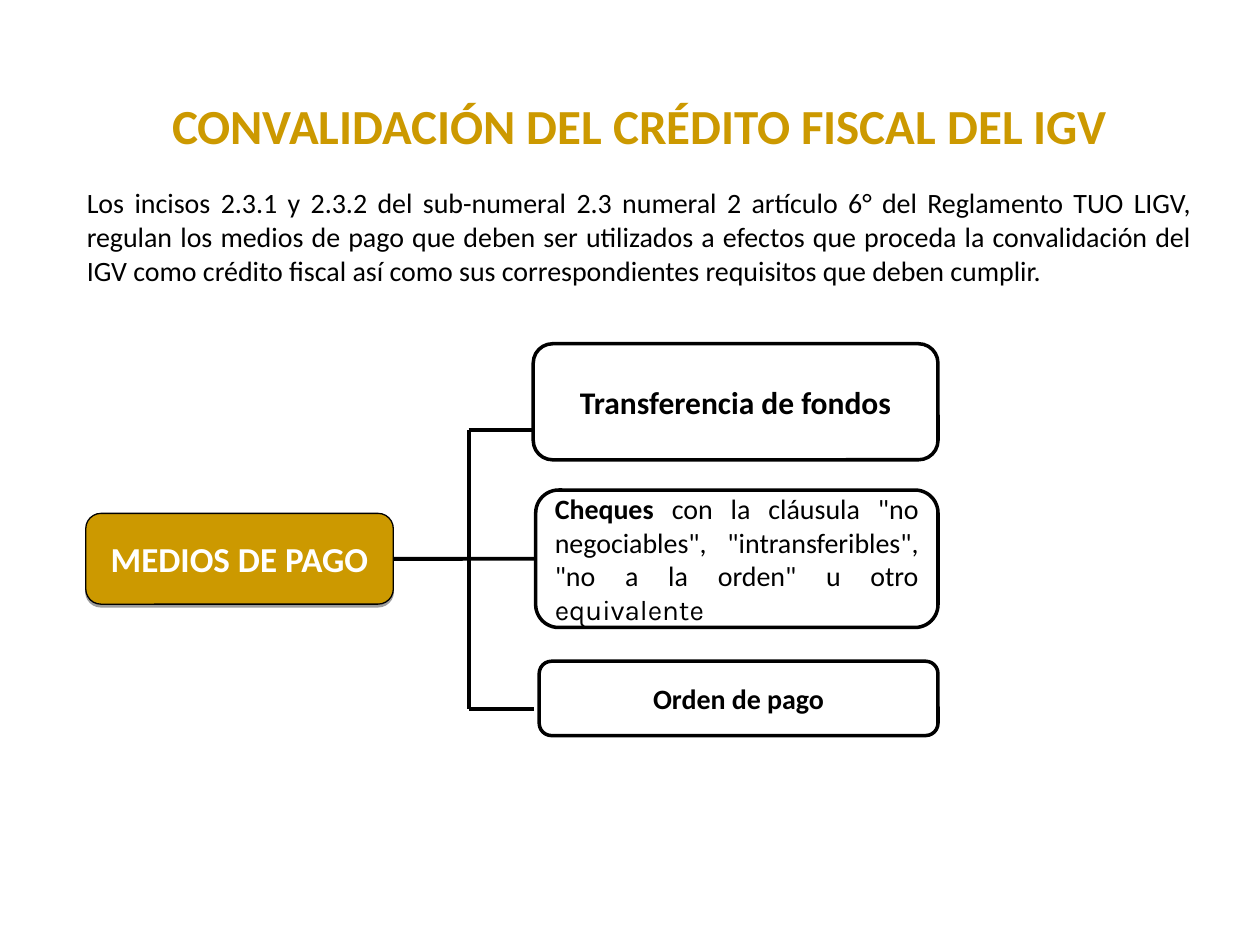
from dataclasses import dataclass

from lxml import etree
from pptx import Presentation
from pptx import util as u
from pptx.dml.color import RGBColor
from pptx.enum import shapes, text
from pptx.oxml import parse_xml
from pptx.oxml import ns


@dataclass(frozen=True)
class Theme:
    gold: RGBColor = RGBColor(0xCC, 0x99, 0x00)
    white: RGBColor = RGBColor(0xFF, 0xFF, 0xFF)
    black: RGBColor = RGBColor(0, 0, 0)
    font: str = "Calibri"
    alt_font: str = "Karla"
    title: int = 28
    root: int = 20
    large: int = 18
    body: int = 16
    thin: float = 0.75
    box: float = 2
    link: float = 2.25


T = Theme()
CENTER, JUSTIFY = text.PP_ALIGN.CENTER, text.PP_ALIGN.JUSTIFY
SHADOW = (
    f'<a:outerShdw {ns.nsdecls("a")} blurRad="0" dist="20320" dir="5400000" rotWithShape="0">'
    '<a:srgbClr val="000000"><a:alpha val="38000"/></a:srgbClr></a:outerShdw>'
)


def write(s, runs, size, color, align, anchor=text.MSO_ANCHOR.MIDDLE):
    tf = s.text_frame
    settings = {"word_wrap": True, "auto_size": text.MSO_AUTO_SIZE.NONE, "vertical_anchor": anchor}
    for name, value in settings.items():
        setattr(tf, name, value)
    p = tf.paragraphs[0]
    p.alignment = align
    for words, extra in runs:
        r = p.add_run()
        r.text = words
        r.font.color.rgb = color
        for name, value in {"name": T.font, "size": u.Pt(size), "bold": False, **extra}.items():
            setattr(r.font, name, value)


def add_title(s, box):
    s.left, s.top, s.width, s.height = map(u.Cm, box)
    runs = [("CONVALIDACIÓN DEL CRÉDITO FISCAL DEL IGV", {"bold": True})]
    write(s, runs, T.title, T.gold, CENTER, text.MSO_ANCHOR.TOP)


def add_intro(slide, box):
    s = slide.shapes.add_textbox(*map(u.Cm, box))
    words = (
        "Los incisos 2.3.1 y 2.3.2 del sub-numeral 2.3 numeral 2 artículo 6° del Reglamento "
        "TUO LIGV, regulan los medios de pago que deben ser utilizados a efectos que proceda "
        "la convalidación del IGV como crédito fiscal así como sus correspondientes "
        "requisitos que deben cumplir."
    )
    write(s, [(words, {})], T.body, T.black, JUSTIFY)


def add_box(slide, box, fill, width):
    s = slide.shapes.add_shape(shapes.MSO_SHAPE.ROUNDED_RECTANGLE, *map(u.Cm, box))
    s.shadow.inherit = False
    s.fill.solid()
    s.fill.fore_color.rgb = fill
    s.line.color.rgb = T.black
    s.line.width = u.Pt(width)
    return s


def add_line(slide, x1, y1, x2, y2):
    c = slide.shapes.add_connector(shapes.MSO_CONNECTOR.STRAIGHT, *map(u.Cm, (x1, y1, x2, y2)))
    c.line.color.rgb = T.black
    c.line.width = u.Pt(T.link)
    etree.SubElement(c._element.spPr, ns.qn("a:effectLst"))
    return c


def add_payment_tree(slide, box):
    left, top, width, height = box
    root = add_box(slide, (left, top + 3.42, 6.2, 1.83), T.gold, T.thin)
    root._element.spPr.find(ns.qn("a:effectLst")).append(parse_xml(SHADOW))
    write(root, [("MEDIOS DE PAGO", {"bold": True})], T.root, T.white, CENTER)

    trunk, end = left + 7.72, left + 9.04
    upper, middle, lower = top + 1.73, top + 4.33, top + 7.37
    link = add_line(slide, left + 6.2, middle, end, middle)
    add_line(slide, trunk, upper, trunk, lower)
    for y in (upper, lower):
        add_line(slide, trunk, y, end, y)

    cheque_runs = [
        ("Cheques", {"bold": True}),
        (' con la cláusula "no negociables", "intransferibles", "no a la orden" u otro', {}),
        (" equivalente", {"name": T.alt_font}),
    ]
    branches = [
        (9.02, 0, 2.34, [("Transferencia de fondos", {"bold": True})], T.large, CENTER),
        (9.07, 2.95, 2.77, cheque_runs, T.body, JUSTIFY),
        (9.14, 6.4, height - 6.4, [("Orden de pago", {"bold": True})], T.body, CENTER),
    ]
    boxes = []
    for x, y, h, runs, size, align in branches:
        s = add_box(slide, (left + x, top + y, width - x, h), T.white, T.box)
        write(s, runs, size, T.black, align)
        boxes.append(s)
    link.begin_connect(root, 3)
    link.end_connect(boxes[1], 1)


def main():
    prs = Presentation()
    prs.slide_width, prs.slide_height = u.Cm(25.4), u.Cm(19.05)
    slide = prs.slides.add_slide(prs.slide_layouts[5])
    add_title(slide.shapes.title, (2.49, 1.8, 20.8, 1.45))
    add_intro(slide, (1.5, 3.61, 22.78, 2.31))
    add_payment_tree(slide, (1.73, 6.93, 17.18, 7.9))
    prs.save("out.pptx")


if __name__ == "__main__":
    main()
